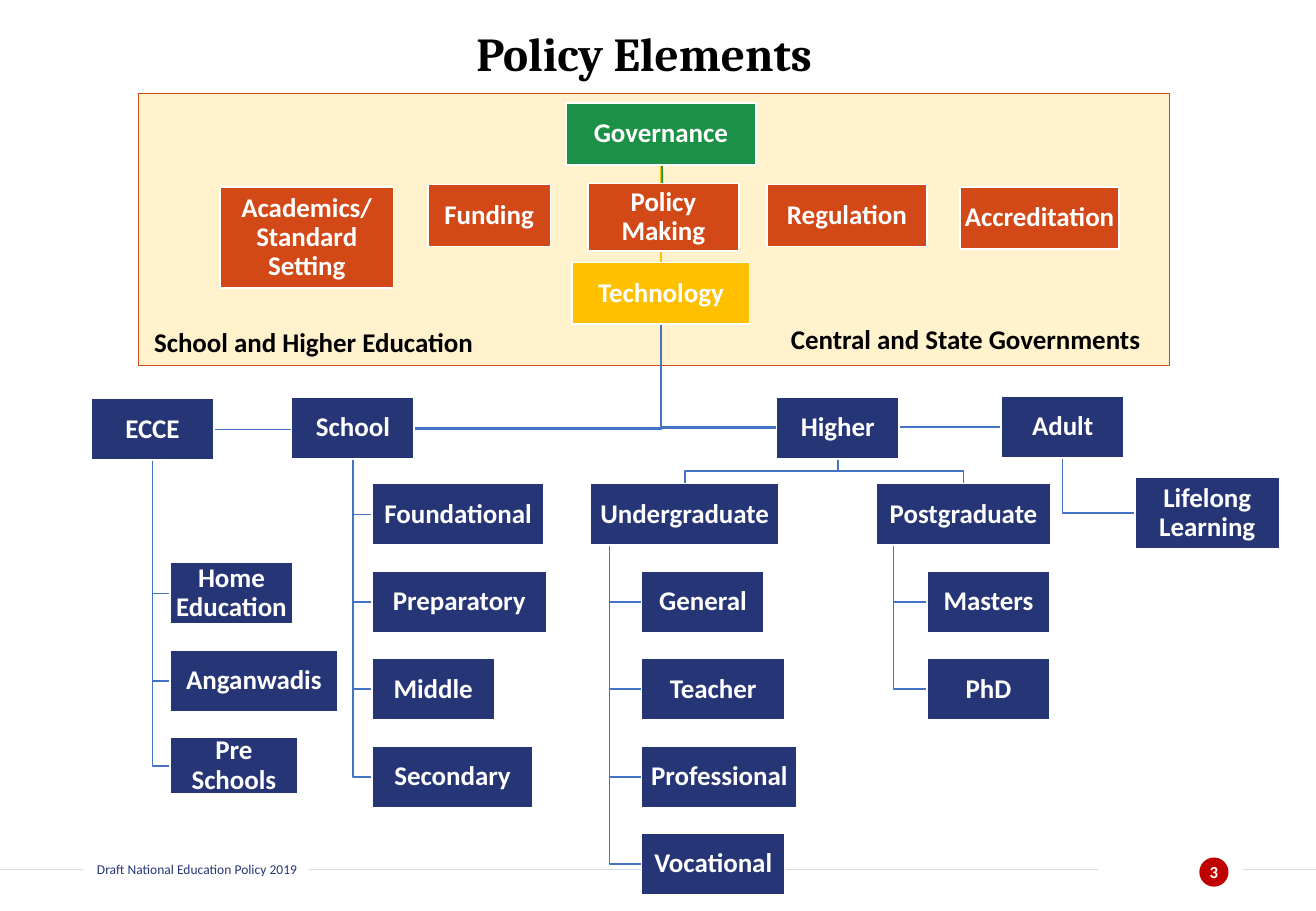
from dataclasses import dataclass

from lxml.etree import SubElement
from pptx import Presentation
from pptx.dml.color import RGBColor
from pptx.enum.shapes import MSO_CONNECTOR as Connector, MSO_SHAPE as Shape
from pptx.enum.text import MSO_ANCHOR as Anchor, PP_ALIGN as Align
from pptx.oxml.ns import qn
from pptx.util import Inches, Pt


@dataclass(frozen=True)
class Theme:
    body: str = "Calibri"
    heading: str = "Cambria"
    title_size: int = 28
    label_size: int = 16
    number_size: int = 10
    footer_size: int = 8
    white: str = "FFFFFF"
    black: str = "000000"
    navy: str = "263576"
    orange: str = "D34817"
    green: str = "1B9147"
    yellow: str = "FFC000"
    cream: str = "FFF2CC"
    blue: str = "4472C4"
    red: str = "C00000"
    rule: str = "D6DCE5"


THEME = Theme()
ROW_TOP, ROW_STEP = 3.98, 0.72


@dataclass
class Box:
    text: str
    left: float
    top: float
    width: float = 1.01
    height: float = 0.51
    fill: str = THEME.navy

    @property
    def right(self):
        return self.left + self.width

    @property
    def bottom(self):
        return self.top + self.height

    @property
    def center(self):
        return self.left + self.width / 2

    @property
    def middle(self):
        return self.top + self.height / 2


def make_column(left, top, *entries):
    """Make boxes at equal steps from (text, width) pairs."""
    return [Box(text, left, top + row * ROW_STEP, width)
            for row, (text, width) in enumerate(entries)]


POLICY = Box("Policy Making", 4.84, 1.51, 1.24, 0.56, THEME.orange)
GOVERNANCE = Box("Governance", 4.66, 0.85, 1.56, fill=THEME.green)
TECHNOLOGY = Box("Technology", 4.71, 2.16, 1.46, fill=THEME.yellow)
FUNCTIONS = [
    Box("Academics/ Standard Setting", 1.81, 1.54, 1.43, 0.83, THEME.orange),
    Box("Funding", 3.52, 1.52, fill=THEME.orange),
    POLICY,
    Box("Regulation", 6.31, 1.52, 1.32, fill=THEME.orange),
    Box("Accreditation", 7.9, 1.54, 1.31, fill=THEME.orange),
]
ECCE = Box("ECCE", 0.75, 3.28)
SCHOOL = Box("School", 2.4, 3.27)
HIGHER = Box("Higher", 6.39, 3.27)
ADULT = Box("Adult", 8.24, 3.26)
UNDERGRADUATE = Box("Undergraduate", 4.86, ROW_TOP, 1.55)
POSTGRADUATE = Box("Postgraduate", 7.21, ROW_TOP, 1.44)
PRE_SCHOOLS = Box("Pre Schools", 1.4, 6.07, 1.05, 0.47)

# Parent, position of the stem along its width, children
BRANCHES = [
    (ECCE, 0.5, make_column(1.4, 4.63, ("Home Education", 1.01),
                            ("Anganwadis", 1.38)) + [PRE_SCHOOLS]),
    (SCHOOL, 0.5, make_column(3.06, ROW_TOP, ("Foundational", 1.42),
                              ("Preparatory", 1.44), ("Middle", 1.01),
                              ("Secondary", 1.33))),
    (UNDERGRADUATE, 0.1, make_column(5.28, ROW_TOP + ROW_STEP,
                                     ("General", 1.01), ("Teacher", 1.18),
                                     ("Professional", 1.28),
                                     ("Vocational", 1.18))),
    (POSTGRADUATE, 0.1, make_column(7.63, ROW_TOP + ROW_STEP,
                                    ("Masters", 1.01), ("PhD", 1.01))),
    (ADULT, 0.5, [Box("Lifelong Learning", 9.34, 3.93, 1.19, 0.59)]),
]


def write(shape, text, size, color, font=THEME.body, bold=True,
          align=Align.LEFT, anchor=Anchor.TOP, inset=None):
    frame = shape.text_frame
    frame.word_wrap = True
    frame.vertical_anchor = anchor
    if inset is not None:
        frame.margin_left = frame.margin_right = Inches(inset)
        frame.margin_top = frame.margin_bottom = Inches(inset)
    paragraph = frame.paragraphs[0]
    paragraph.text = text
    paragraph.alignment = align
    paragraph.font.name = font
    paragraph.font.size = Pt(size)
    paragraph.font.bold = bold
    paragraph.font.color.rgb = RGBColor.from_string(color)
    return paragraph


def set_line(shape, color, width):
    shape.line.color.rgb = RGBColor.from_string(color)
    shape.line.width = Pt(width)


def add_filled(slide, kind, left, top, width, height, fill):
    shape = slide.shapes.add_shape(kind, Inches(left), Inches(top),
                                   Inches(width), Inches(height))
    shape.shadow.inherit = False
    shape.fill.solid()
    shape.fill.fore_color.rgb = RGBColor.from_string(fill)
    shape.line.fill.background()
    return shape


def add_label(slide, text, left, top, width, height, size, color, bold=True):
    label = slide.shapes.add_textbox(Inches(left), Inches(top),
                                     Inches(width), Inches(height))
    write(label, text, size, color, bold=bold)


def add_box(slide, box):
    shape = add_filled(slide, Shape.RECTANGLE, box.left, box.top,
                       box.width, box.height, box.fill)
    set_line(shape, THEME.white, 1)
    paragraph = write(shape, box.text, THEME.label_size, THEME.white,
                      align=Align.CENTER, anchor=Anchor.MIDDLE, inset=0.01)
    paragraph.line_spacing = 0.9


def add_line(slide, x1, y1, x2, y2, color, width):
    line = slide.shapes.add_connector(Connector.STRAIGHT, Inches(x1),
                                      Inches(y1), Inches(x2), Inches(y2))
    set_line(line, color, width)
    SubElement(line._element.spPr, qn("a:effectLst"))


def add_elbow(slide, *points):
    """Draw an open, unfilled line through the points."""
    start, *rest = [(Inches(x), Inches(y)) for x, y in points]
    builder = slide.shapes.build_freeform(*start)
    builder.add_line_segments(rest, close=False)
    elbow = builder.convert_to_shape()
    elbow.shadow.inherit = False
    elbow.fill.background()
    set_line(elbow, THEME.blue, 1)


def add_footer(slide):
    add_label(slide, "Draft National Education Policy 2019", 0.7, 7.04, 3.03,
              0.24, THEME.footer_size, THEME.navy, bold=False)
    for start, end in ((0, 0.68), (2.54, 9.04), (10.23, 10.83)):
        add_line(slide, start, 7.16, end, 7.16, THEME.rule, 0.25)
    badge = add_filled(slide, Shape.OVAL, 9.87, 7.06, 0.24, 0.24, THEME.red)
    write(badge, "3", THEME.number_size, THEME.white, align=Align.CENTER,
          anchor=Anchor.MIDDLE, inset=0)


def add_links(slide):
    trunk = TECHNOLOGY.center
    for box, edge in ((ECCE, ECCE.right), (SCHOOL, SCHOOL.right),
                      (HIGHER, HIGHER.left), (ADULT, ADULT.left)):
        add_elbow(slide, (trunk, TECHNOLOGY.bottom), (trunk, box.middle),
                  (edge, box.middle))
    for parent, position, children in BRANCHES:
        stem = parent.left + position * parent.width
        for child in children:
            add_elbow(slide, (stem, parent.bottom), (stem, child.middle),
                      (child.left, child.middle))
    for degree in (UNDERGRADUATE, POSTGRADUATE):
        fork = (HIGHER.bottom + degree.top) / 2
        add_elbow(slide, (HIGHER.center, HIGHER.bottom), (HIGHER.center, fork),
                  (degree.center, fork), (degree.center, degree.top))
    add_line(slide, trunk, GOVERNANCE.bottom, trunk, TECHNOLOGY.top,
             THEME.yellow, 1)
    add_line(slide, POLICY.center, POLICY.bottom, trunk, GOVERNANCE.top,
             THEME.green, 1)


def main():
    presentation = Presentation()
    presentation.slide_width = Inches(10.83)
    presentation.slide_height = Inches(7.5)
    slide = presentation.slides.add_slide(presentation.slide_layouts[5])

    title = slide.shapes.title
    title.left, title.top = Inches(3.82), Inches(0.15)
    title.width, title.height = Inches(3.42), Inches(0.57)
    write(title, "Policy Elements", THEME.title_size, THEME.black,
          font=THEME.heading)

    add_footer(slide)
    panel = add_filled(slide, Shape.RECTANGLE, 1.14, 0.77, 8.48, 2.24,
                       THEME.cream)
    set_line(panel, THEME.orange, 0.5)
    add_links(slide)
    boxes = [*FUNCTIONS, GOVERNANCE, TECHNOLOGY, HIGHER]
    for parent, _, children in BRANCHES:
        boxes += [parent, *children]
    for box in boxes:
        add_box(slide, box)
    add_label(slide, "Central and State Governments", 6.41, 2.61, 3.18, 0.37,
              THEME.label_size, THEME.black)
    add_label(slide, "School and Higher Education", 1.17, 2.63, 2.87, 0.37,
              THEME.label_size, THEME.black)
    presentation.save("out.pptx")


if __name__ == "__main__":
    main()
